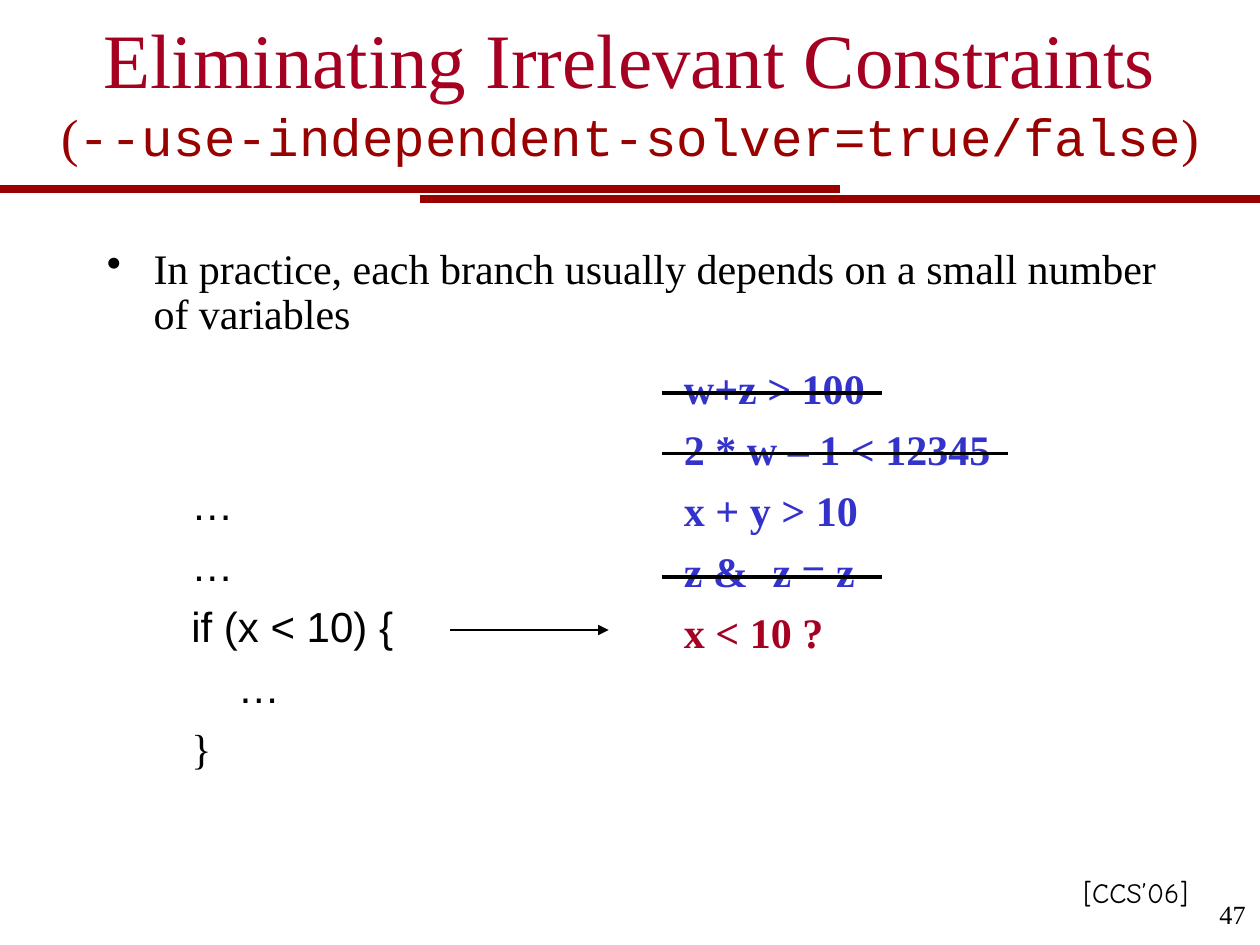
"""Build the slide on eliminating irrelevant constraints."""
from dataclasses import dataclass

from lxml import etree
from pptx import Presentation
from pptx.dml.color import RGBColor
from pptx.enum.shapes import MSO_CONNECTOR
from pptx.enum.text import MSO_ANCHOR, PP_ALIGN
from pptx.oxml.ns import qn
from pptx.util import Inches, Pt

LINE = MSO_CONNECTOR.STRAIGHT
TOP, MIDDLE = MSO_ANCHOR.TOP, MSO_ANCHOR.MIDDLE
CENTER = PP_ALIGN.CENTER
SERIF, SANS, MONO, COMIC = "Times New Roman", "Arial", "Courier New", "Comic Neue"
BLACK, BLUE, RED, MAROON = "000000", "3333CC", "A50021", "990000"


@dataclass
class Rule:
    """A straight line, level across the slide."""
    left: float
    right: float
    top: float
    width: float = 2
    color: str = BLACK
    arrow: bool = False


@dataclass
class Row:
    """One line of code or one constraint."""
    text: str
    font: str = SANS
    color: str = BLACK
    indent: float = 0


BARS = [Rule(0, 6.67, 1.5, 4.5, MAROON), Rule(3.33, 10, 1.58, 4.5, MAROON)]
STRIKES = [Rule(5.25, 7, 3.12), Rule(5.25, 8, 3.6), Rule(5.25, 7, 4.58)]
ARROW = Rule(3.57, 4.83, 5, 1, arrow=True)
TERMS = [Row(term, SERIF, BLUE) for term in
         ("w+z > 100", "2 * w – 1 < 12345", "x + y > 10", "z & -z = z")]
TERMS.append(Row("x < 10 ?", SERIF, RED))
CODE = [Row("…"), Row("…"), Row("if (x < 10) {"), Row("…", indent=0.37),
        Row("}", SERIF)]


def paint(color: str) -> RGBColor:
    """Turn a hex string into a colour."""
    return RGBColor.from_string(color)


def add_rule(slide, rule: Rule) -> None:
    """Draw one line, with an arrowhead if asked."""
    top = Inches(rule.top)
    line = slide.shapes.add_connector(
        LINE, Inches(rule.left), top, Inches(rule.right), top)
    line.line.color.rgb = paint(rule.color)
    line.line.width = Pt(rule.width)
    if rule.arrow:
        etree.SubElement(line.line._get_or_add_ln(), qn("a:tailEnd"), type="triangle")
    etree.SubElement(line._element.spPr, qn("a:effectLst"))


def add_box(slide, left: float, top: float, width: float, height: float, anchor=TOP):
    """Add an empty text box that wraps and return its frame."""
    box = slide.shapes.add_textbox(
        Inches(left), Inches(top), Inches(width), Inches(height))
    frame = box.text_frame
    frame.word_wrap = True
    frame.vertical_anchor = anchor
    return frame


def add_run(para, text: str, size=24, font=SERIF, color=BLACK, bold=False) -> None:
    """Add text with its format to a paragraph."""
    run = para.add_run()
    run.text = text
    run.font.size = Pt(size)
    run.font.name = font
    run.font.bold = bold
    run.font.color.rgb = paint(color)


def add_para(frame, before=0, spacing=None, align=None):
    """Return the next paragraph of a frame, using the empty first one."""
    first = frame.paragraphs[0]
    para = frame.add_paragraph() if first.runs else first
    para.space_before = Pt(before)
    para.line_spacing = spacing
    para.alignment = align
    return para


def set_indent(para, left: float, first: float = 0) -> None:
    """Set the left margin and first-line indent."""
    props = para._p.get_or_add_pPr()
    props.set("marL", str(Inches(left)))
    props.set("indent", str(Inches(first)))


def add_bullet(para, mark: str, color: str) -> None:
    """Give a paragraph a hanging bullet."""
    set_indent(para, 0.37, -0.37)
    props = para._p.get_or_add_pPr()
    tint = etree.SubElement(props, qn("a:buClr"))
    etree.SubElement(tint, qn("a:srgbClr"), val=color)
    etree.SubElement(props, qn("a:buChar"), char=mark)


def add_rows(frame, rows: list[Row], bold: bool = False) -> None:
    """Write rows as spaced paragraphs."""
    for row in rows:
        para = add_para(frame, before=6)
        if row.indent:
            set_indent(para, row.indent)
        add_run(para, row.text, font=row.font, color=row.color, bold=bold)


def main() -> None:
    """Build and save the slide."""
    deck = Presentation()
    deck.slide_width, deck.slide_height = Inches(10), Inches(7.5)
    slide = deck.slides.add_slide(deck.slide_layouts[6])

    for bar in BARS:
        add_rule(slide, bar)

    title = add_box(slide, 0.25, 0.08, 9.5, 1.25, MIDDLE)
    add_run(add_para(title, align=CENTER), "Eliminating Irrelevant Constraints",
            size=44, color=RED)
    option = add_para(title, align=CENTER)
    for text, font in (("(", SERIF), ("--use-independent-solver=true/false", MONO),
                       (")", SERIF)):
        add_run(option, text, size=30, font=font, color=MAROON)

    point = add_para(add_box(slide, 0.75, 1.92, 8.58, 0.83), before=15, spacing=0.9)
    add_bullet(point, "•", BLACK)
    add_run(point, "In practice, each branch usually depends on "
                   "a small number of variables")

    add_rows(add_box(slide, 5.33, 2.83, 2.92, 2.46), TERMS, bold=True)
    add_rows(add_box(slide, 1.42, 3.75, 1.9, 2.44), CODE)
    for rule in [*STRIKES, ARROW]:
        add_rule(slide, rule)

    add_run(add_para(add_box(slide, 9.58, 7.08, 0.42, 0.5)), "47", size=15)
    cite = add_para(add_box(slide, 8.5, 6.92, 1.33, 0.36), before=6, spacing=0.95)
    add_run(cite, "[CCS’06]", size=16, font=COMIC)
    deck.save("out.pptx")


if __name__ == "__main__":
    main()
